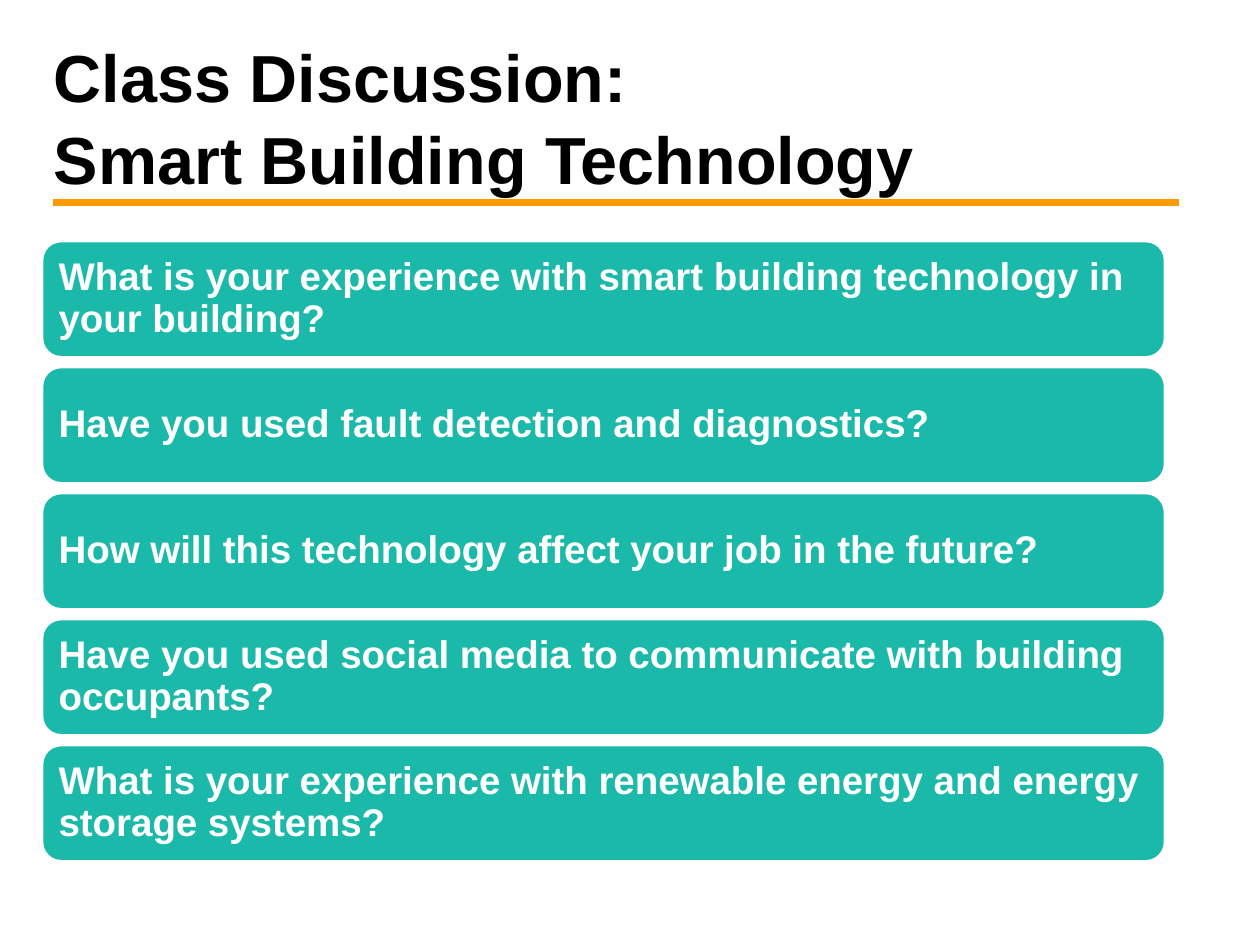
import pptx
import pptx.util
import pptx.dml.color
import pptx.enum.shapes
import pptx.enum.text
import lxml.etree

TITLE = "Class Discussion:\vSmart Building Technology"
QUESTIONS = [
    "What is your experience with smart building technology in your building?",
    "Have you used fault detection and diagnostics?",
    "How will this technology affect your job in the future?",
    "Have you used social media to communicate with building occupants?",
    "What is your experience with renewable energy and energy storage systems?",
]

LEFT = 0.33
FIRST_TOP, ROW_PITCH = 1.91, 1.0
CARD_WIDTH, CARD_HEIGHT = 8.92, 0.93
RULE_LEFT, RULE_RIGHT, RULE_TOP = 0.42, 9.36, 1.61
INCH = pptx.util.Inches


def color(value):
    return pptx.dml.color.RGBColor.from_string(value)


def write(shape, text, size, text_color, spacing, inset):
    """Put one left-aligned, vertically centred bold paragraph in a shape."""
    frame = shape.text_frame
    frame.word_wrap = True
    frame.vertical_anchor = pptx.enum.text.MSO_ANCHOR.MIDDLE
    frame.margin_left = frame.margin_right = INCH(inset)
    frame.margin_top = frame.margin_bottom = INCH(inset)
    para = frame.paragraphs[0]
    para.text = text
    para.alignment = pptx.enum.text.PP_ALIGN.LEFT
    para.line_spacing = spacing
    para.font.name = "Arial"
    para.font.size = pptx.util.Pt(size)
    para.font.bold = True
    para.font.color.rgb = color(text_color)


def add_rule(page):
    rule = page.shapes.add_connector(
        pptx.enum.shapes.MSO_CONNECTOR.STRAIGHT,
        INCH(RULE_LEFT), INCH(RULE_TOP), INCH(RULE_RIGHT), INCH(RULE_TOP))
    rule.line.color.rgb = color("FE9B03")
    rule.line.width = pptx.util.Pt(4)
    properties = rule._element.spPr
    lxml.etree.SubElement(properties, pptx.oxml.ns.qn("a:effectLst"))


def add_card(page, row, question):
    card = page.shapes.add_shape(
        pptx.enum.shapes.MSO_SHAPE.ROUNDED_RECTANGLE,
        INCH(LEFT), INCH(FIRST_TOP + row * ROW_PITCH),
        INCH(CARD_WIDTH), INCH(CARD_HEIGHT))
    card.shadow.inherit = False
    card.fill.solid()
    card.fill.fore_color.rgb = color("1BB9A9")
    card.line.color.rgb = color("FFFFFF")
    card.line.width = pptx.util.Pt(2)
    write(card, question, 22, "FFFFFF", 0.9, 0.09)


def main():
    deck = pptx.Presentation()
    deck.slide_width, deck.slide_height = INCH(10), INCH(7.5)
    page = deck.slides.add_slide(deck.slide_layouts[6])
    add_rule(page)
    title = page.shapes.add_textbox(INCH(LEFT), INCH(0.47), INCH(7.5), INCH(0.9))
    write(title, TITLE, 38, "000000", 1.03, 0.1)
    for row, question in enumerate(QUESTIONS):
        add_card(page, row, question)
    deck.save("out.pptx")


if __name__ == "__main__":
    main()
